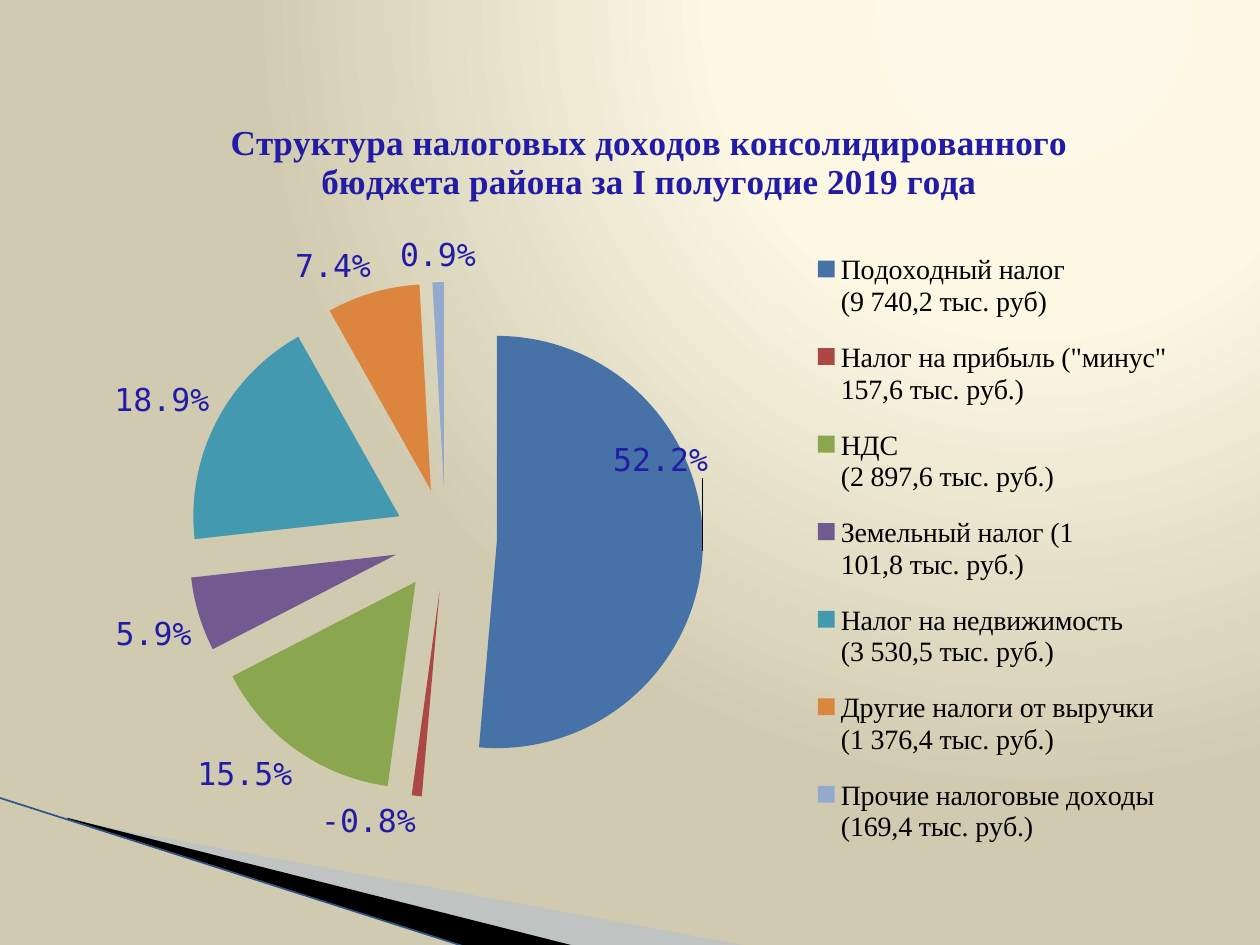
from lxml import etree
from pptx import Presentation
from pptx import util as u
from pptx.chart import data
from pptx.dml.color import RGBColor
from pptx.enum import chart as ch, shapes
from pptx.oxml import parse_xml
from pptx.oxml.ns import nsdecls, qn

NAVY = RGBColor(0x22, 0x1B, 0xA5)
BLACK = RGBColor(0, 0, 0)
MIST = RGBColor(0xA7, 0xB9, 0xDB)
EDGE = RGBColor(0x2F, 0x54, 0x87)
HUES = [RGBColor.from_string(h) for h in (
    "4672A8", "AB4744", "8AA64F", "725990", "4299B0", "DC853E", "93A9CE")]
SERIF, MONO = "Times New Roman", "DejaVu Sans Mono"
WIDE, HIGH = 8.98, 6.14  # chart size in inches
TAXES = [
    ("Подоходный налог\n(9 740,2 тыс. руб)", 0.522),
    ("Налог на прибыль (\"минус\"\n157,6 тыс. руб.)", -0.008),
    ("НДС\n(2 897,6 тыс. руб.)", 0.155),
    ("Земельный налог (1\n101,8 тыс. руб.)", 0.059),
    ("Налог на недвижимость\n(3 530,5 тыс. руб.)", 0.189),
    ("Другие налоги от выручки\n(1 376,4 тыс. руб.)", 0.074),
    ("Прочие налоговые доходы\n(169,4 тыс. руб.)", 0.009),
]


def style(font, name=MONO, size=18, color=BLACK, bold=False):
    font.name, font.size, font.bold = name, u.Pt(size), bold
    font.color.rgb = color


def place(part, spot, modes="", inner=False, **box):
    """Give a chart part a manual layout, with the box in inches."""
    for old in part.findall(qn("c:layout")):
        part.remove(old)
    tags = '<c:layoutTarget val="inner"/>' if inner else ""
    tags += "".join(f'<c:{m}Mode val="edge"/>' for m in modes)
    for side, size in box.items():
        whole = WIDE if side in "xw" else HIGH
        tags += f'<c:{side} val="{size / whole}"/>'
    part.insert(spot, parse_xml(
        f'<c:layout {nsdecls("c")}><c:manualLayout>{tags}'
        '</c:manualLayout></c:layout>'))


deck = Presentation()
deck.slide_width, deck.slide_height = u.Inches(10), u.Inches(7.5)
slide = deck.slides.add_slide(deck.slide_layouts[6])

# Background: light spot at the upper right
stops = "".join(
    f'<a:gs pos="{pos * 1000}"><a:srgbClr val="{hue}"/></a:gs>'
    for pos, hue in ((0, "FDF9E8"), (40, "FCF8E4"), (100, "D0CBB0")))
slide.background.fill.solid()
solid = slide.background.fill._xPr.find(qn("a:solidFill"))
solid.getparent().replace(solid, parse_xml(
    f'<a:gradFill {nsdecls("a")} rotWithShape="1"><a:gsLst>{stops}</a:gsLst>'
    '<a:path path="circle"><a:fillToRect l="65000" t="0" r="0" b="98000"/>'
    '</a:path></a:gradFill>'))

# Corner wedges
wedges = [
    (MIST, 40, [(0.55, 6.51), (5.95, 7.51), (4.56, 7.51), (0.55, 6.5)]),
    (BLACK, 100, [(0.53, 6.49), (4.57, 7.51), (3.72, 7.52), (0.54, 6.5)]),
]
for hue, alpha, spots in wedges:
    first, *rest = [(u.Inches(x), u.Inches(y)) for x, y in spots]
    path = slide.shapes.build_freeform(*first)
    path.add_line_segments(rest)
    wedge = path.convert_to_shape()
    wedge.shadow.inherit = False
    wedge.fill.solid()
    wedge.fill.fore_color.rgb = hue
    wedge.line.fill.background()
    if alpha < 100:
        tint = wedge.fill._xPr.find(".//" + qn("a:srgbClr"))
        etree.SubElement(tint, qn("a:alpha")).set("val", str(alpha * 1000))

rim = slide.shapes.add_connector(
    shapes.MSO_CONNECTOR.STRAIGHT,
    u.Inches(-0.01), u.Inches(6.33), u.Inches(3.71), u.Inches(7.52))
rim.line.color.rgb = EDGE
rim.line.width = u.Pt(0.95)
etree.SubElement(rim._element.spPr, qn("a:effectLst"))

# Pie chart
table = data.CategoryChartData(number_format="0.0%")
table.categories = [name for name, share in TAXES]
table.add_series("Series 1", [share for name, share in TAXES])
pie = slide.shapes.add_chart(
    ch.XL_CHART_TYPE.PIE, u.Inches(0.67), u.Inches(0.76),
    u.Inches(WIDE), u.Inches(HIGH), table).chart
style(pie.font)
plot = pie.plots[0]
plot.vary_by_categories = True
place(pie._chartSpace.chart.plotArea, 0, "xy", inner=True,
      x=0.81, y=1.48, w=4.11, h=4.09)

# Slices
taxes = plot.series[0]
taxes._element.find(qn("c:tx")).addnext(
    parse_xml(f'<c:explosion {nsdecls("c")} val="25"/>'))
for spot, hue in enumerate(HUES):
    part = taxes.points[spot].format.fill
    part.solid()
    part.fore_color.rgb = hue

# Value labels; the largest is moved onto its slice
tags = taxes.data_labels
tags.show_value = True
tags.show_percentage = False
tags.number_format, tags.number_format_is_linked = "0.0%", False
tags.position = ch.XL_LABEL_POSITION.OUTSIDE_END
style(tags.font, color=NAVY)
big = taxes.points[0].data_label
big.position = ch.XL_LABEL_POSITION.OUTSIDE_END
style(big.font, color=NAVY)
place(big._dLbl, 1, x=-0.77, y=-0.72)

# Chart title
pie.has_title = True
head = pie.chart_title
head.include_in_layout = False
run = head.text_frame.paragraphs[0].add_run()
run.text = ("Структура налоговых доходов консолидированного "
            "бюджета района за I полугодие 2019 года")
style(run.font, name=SERIF, size=20, color=NAVY, bold=True)
place(head._element, 1, "xy", x=1.11, y=0.14)

# Legend
pie.has_legend = True
key = pie.legend
key.position = ch.XL_LEGEND_POSITION.RIGHT
key.include_in_layout = False
style(key.font, name=SERIF, size=16)
place(key._element, 1, "xy", x=5.68, y=1.07, w=3.05, h=5.06)

deck.save("out.pptx")
